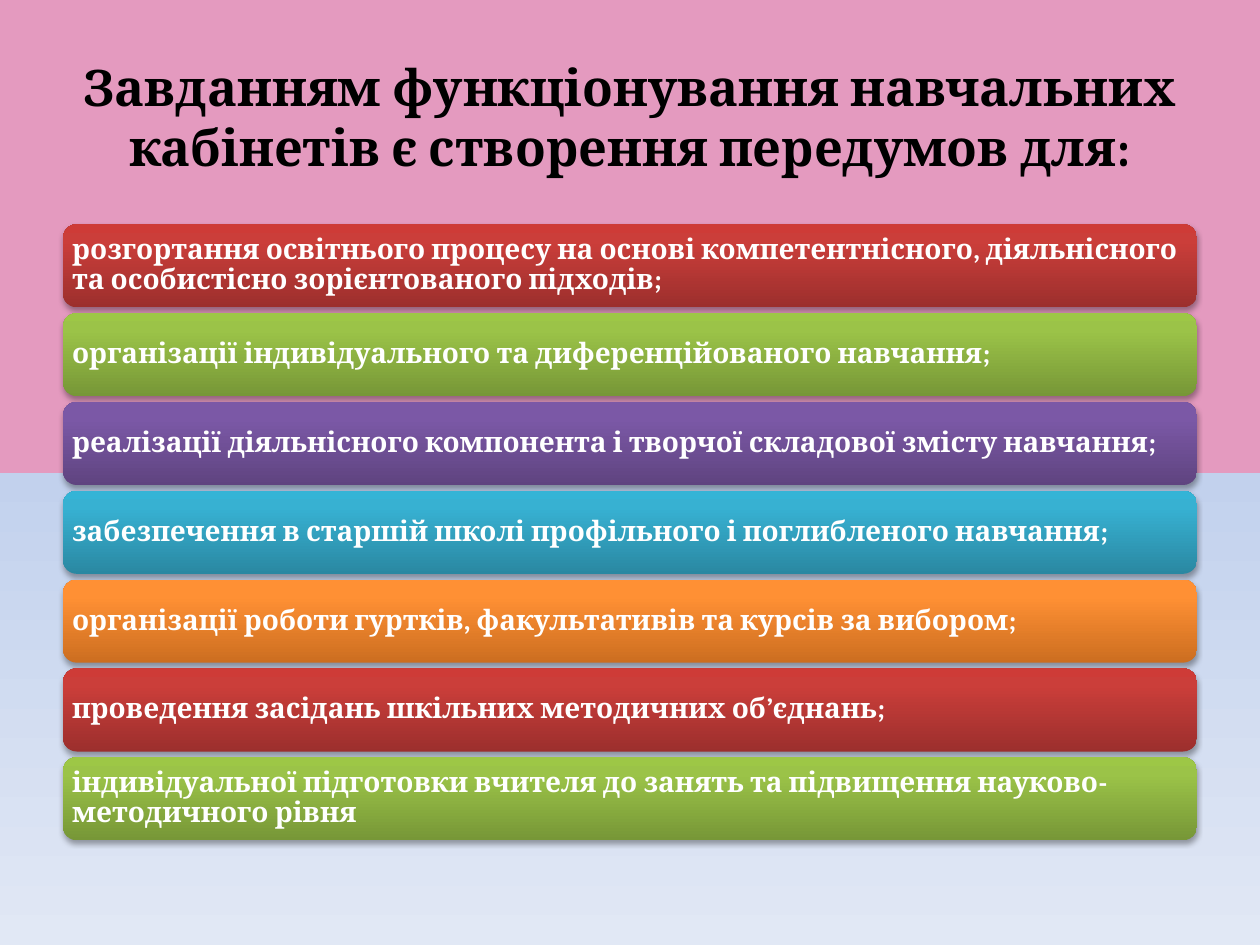
from pptx import Presentation
from pptx.dml.color import RGBColor
from pptx.enum.shapes import MSO_SHAPE as Shape
from pptx.enum.text import MSO_ANCHOR as Anchor, MSO_AUTO_SIZE as AutoSize, PP_ALIGN as Align
from pptx.oxml import parse_xml
from pptx.oxml.ns import nsdecls, qn
from pptx.util import Inches, Pt

TITLE = "Завданням функціонування навчальних кабінетів є створення передумов для:"
TASKS = [
    "розгортання освітнього процесу на основі компетентнісного, діяльнісного та особистісно зорієнтованого підходів;",
    "організації індивідуального та диференційованого навчання;",
    "реалізації діяльнісного компонента і творчої складової змісту навчання;",
    "забезпечення в старшій школі профільного і поглибленого навчання;",
    "організації роботи гуртків, факультативів та курсів за вибором;",
    "проведення засідань шкільних методичних об’єднань;",
    "індивідуальної підготовки вчителя до занять та підвищення науково-методичного рівня",
]

FONT = "Cambria"
BLACK = RGBColor(0x00, 0x00, 0x00)
WHITE = RGBColor(0xFF, 0xFF, 0xFF)
PINK = RGBColor(0xE4, 0x9A, 0xBF)
BLUE = RGBColor(0xC2, 0xD1, 0xED)
PALE_BLUE = RGBColor(0xE1, 0xE8, 0xF5)
RED_SHADES = RGBColor(0x9C, 0x2F, 0x2D), RGBColor(0xCB, 0x3E, 0x3A), RGBColor(0xCE, 0x3B, 0x37)
GREEN_SHADES = RGBColor(0x77, 0x97, 0x37), RGBColor(0x9B, 0xC3, 0x48), RGBColor(0x9D, 0xC7, 0x46)
PURPLE_SHADES = RGBColor(0x5F, 0x44, 0x80), RGBColor(0x7B, 0x58, 0xA6), RGBColor(0x7C, 0x57, 0xA8)
TEAL_SHADES = RGBColor(0x2A, 0x88, 0xA2), RGBColor(0x37, 0xB1, 0xD2), RGBColor(0x34, 0xB4, 0xD6)
ORANGE_SHADES = RGBColor(0xCC, 0x6E, 0x20), RGBColor(0xFF, 0x90, 0x34), RGBColor(0xFF, 0x91, 0x36)
BAR_SHADES = [RED_SHADES, GREEN_SHADES, PURPLE_SHADES, TEAL_SHADES, ORANGE_SHADES]

LEFT, WIDTH = 0.5, 9
TITLE_TOP, TITLE_HEIGHT = 0.3, 1.25
BAR_TOP, BAR_HEIGHT, BAR_STEP = 1.78, 0.66, 0.705


def paint_gradient(owner, fill, stops, angle):
    fill.solid()
    solid = next(owner.iter(qn("a:solidFill")))
    stop_xml = "".join(
        f'<a:gs pos="{percent * 1000}"><a:srgbClr val="{color}"/></a:gs>' for percent, color in stops
    )
    gradient = parse_xml(
        f'<a:gradFill {nsdecls("a")} rotWithShape="1"><a:gsLst>{stop_xml}</a:gsLst>'
        f'<a:lin ang="{angle * 60000}" scaled="0"/></a:gradFill>'
    )
    solid.getparent().replace(solid, gradient)


def add_shadow(shape):
    shape.shadow.inherit = False
    effects = shape.element.spPr.find(qn("a:effectLst"))
    effects.append(parse_xml(
        f'<a:outerShdw {nsdecls("a")} blurRad="{Pt(3.1)}" dist="{Pt(1.8)}" dir="5400000" rotWithShape="0">'
        f'<a:srgbClr val="{BLACK}"><a:alpha val="35000"/></a:srgbClr></a:outerShdw>'
    ))


def write(frame, text, size, color, align):
    frame.text = text
    frame.word_wrap = True
    frame.auto_size = AutoSize.NONE
    frame.vertical_anchor = Anchor.MIDDLE
    paragraph = frame.paragraphs[0]
    paragraph.alignment = align
    font = paragraph.runs[0].font
    font.name, font.size, font.bold = FONT, Pt(size), True
    font.color.rgb = color


def add_bar(slide, index, task):
    bar = slide.shapes.add_shape(
        Shape.ROUNDED_RECTANGLE, Inches(LEFT), Inches(BAR_TOP + index * BAR_STEP),
        Inches(WIDTH), Inches(BAR_HEIGHT),
    )
    shades = BAR_SHADES[index % len(BAR_SHADES)]
    paint_gradient(bar.element.spPr, bar.fill, zip((0, 80, 100), shades), 270)
    bar.line.fill.background()
    add_shadow(bar)
    frame = bar.text_frame
    frame.margin_left = frame.margin_right = Inches(0.04)
    frame.margin_top = frame.margin_bottom = Inches(0.04)
    write(frame, task, 16, WHITE, Align.LEFT)
    frame.paragraphs[0].line_spacing = 0.9


def main():
    deck = Presentation()
    deck.slide_width, deck.slide_height = Inches(10), Inches(7.5)
    slide = deck.slides.add_slide(deck.slide_layouts[5])
    backdrop = [(50, PINK), (50, BLUE), (100, PALE_BLUE)]
    paint_gradient(slide.element, slide.background.fill, backdrop, 90)

    title = slide.shapes.title
    title.left, title.top = Inches(LEFT), Inches(TITLE_TOP)
    title.width, title.height = Inches(WIDTH), Inches(TITLE_HEIGHT)
    write(title.text_frame, TITLE, 28.8, BLACK, Align.CENTER)

    for index, task in enumerate(TASKS):
        add_bar(slide, index, task)
    deck.save("out.pptx")


if __name__ == "__main__":
    main()
